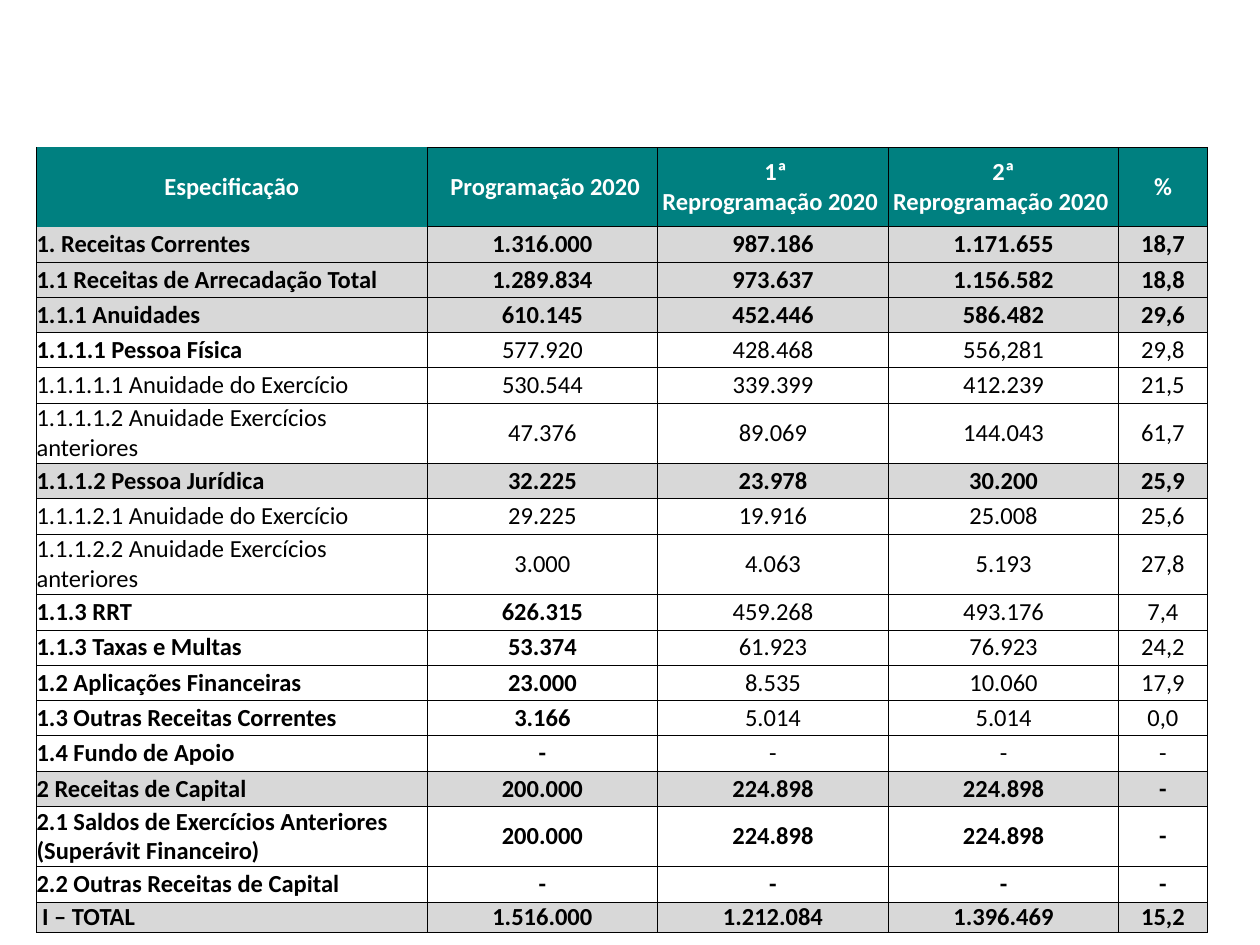
from lxml import etree
from pptx import Presentation
from pptx.dml.color import RGBColor
from pptx.enum import text
from pptx.oxml import ns
from pptx.util import Inches, Pt

TEAL, GREY, WHITE, BLACK = "008080", "D8D8D8", "FFFFFF", "000000"

HEADER = ["Especificação", " Programação 2020", " 1ª\nReprogramação 2020 ",
          "2ª\nReprogramação 2020 ", "%"]

# Number of bold cells from the left, fill, cell texts
ROWS = [
    (5, GREY, ["1. Receitas Correntes", "1.316.000", "987.186", "1.171.655", "18,7"]),
    (5, GREY, ["1.1 Receitas de Arrecadação Total", "1.289.834", "973.637", "1.156.582", "18,8"]),
    (5, GREY, ["1.1.1 Anuidades", "610.145", "452.446", "586.482", "29,6"]),
    (1, WHITE, ["1.1.1.1 Pessoa Física", "577.920", "428.468", "556,281", "29,8"]),
    (0, WHITE, ["1.1.1.1.1 Anuidade do Exercício", "530.544", "339.399", "412.239", "21,5"]),
    (0, WHITE, ["1.1.1.1.2 Anuidade Exercícios anteriores", "47.376", "89.069", "144.043", "61,7"]),
    (5, GREY, ["1.1.1.2 Pessoa Jurídica", "32.225", "23.978", "30.200", "25,9"]),
    (0, WHITE, ["1.1.1.2.1 Anuidade do Exercício", "29.225", "19.916", "25.008", "25,6"]),
    (0, WHITE, ["1.1.1.2.2 Anuidade Exercícios anteriores", "3.000", "4.063", "5.193", "27,8"]),
    (2, WHITE, ["1.1.3 RRT", "626.315", "459.268", "493.176", "7,4"]),
    (2, WHITE, ["1.1.3 Taxas e Multas", "53.374", "61.923", "76.923", "24,2"]),
    (2, WHITE, ["1.2 Aplicações Financeiras", "23.000", "8.535", "10.060", "17,9"]),
    (2, WHITE, ["1.3 Outras Receitas Correntes", "3.166", "5.014", "5.014", "0,0"]),
    (2, WHITE, ["1.4 Fundo de Apoio", "-", "-", "-", "-"]),
    (5, GREY, ["2 Receitas de Capital", "200.000", "224.898", "224.898", "-"]),
    (5, WHITE, ["2.1 Saldos de Exercícios Anteriores (Superávit Financeiro)",
                "200.000", "224.898", "224.898", "-"]),
    (5, WHITE, ["2.2 Outras Receitas de Capital", "-", "-", "-", "-"]),
    (5, GREY, [" I – TOTAL", "1.516.000", "1.212.084", "1.396.469", "15,2"]),
]
COLUMN_WIDTHS = [3.1, 1.83, 1.83, 1.83, 0.7]
HEADER_HEIGHT, LINE_HEIGHT, TWO_LINE_HEIGHT, TOTAL_HEIGHT = 0.63, 0.28, 0.48, 0.24
ONE_LINE_LIMIT = 35


def color(value):
    return RGBColor.from_string(value)


def row_height(label):
    return TWO_LINE_HEIGHT if len(label) > ONE_LINE_LIMIT else LINE_HEIGHT


def set_borders(cell, sides):
    """Draw thin black lines on the given sides and none on the others."""
    properties = cell._tc.get_or_add_tcPr()
    for side in "LRTB":
        line = etree.SubElement(properties, ns.qn(f"a:ln{side}"), w=str(Pt(0.5)))
        if side in sides:
            fill = etree.SubElement(line, ns.qn("a:solidFill"))
            etree.SubElement(fill, ns.qn("a:srgbClr"), val=BLACK)
        else:
            etree.SubElement(line, ns.qn("a:noFill"))


def fill_cell(cell, words, fill, ink, bold, centred, sides):
    set_borders(cell, sides)
    cell.fill.solid()
    cell.fill.fore_color.rgb = color(fill)
    cell.margin_left = cell.margin_right = cell.margin_top = cell.margin_bottom = 0
    cell.vertical_anchor = text.MSO_ANCHOR.MIDDLE
    cell.text_frame.text = words
    for para in cell.text_frame.paragraphs:
        para.alignment = text.PP_ALIGN.CENTER if centred else text.PP_ALIGN.LEFT
        for span in para.runs:
            span.font.name = "Calibri"
            span.font.size = Pt(14)
            span.font.bold = bold
            span.font.color.rgb = color(ink)


def main():
    deck = Presentation()
    deck.slide_width, deck.slide_height = Inches(10), Inches(7.5)
    page = deck.slides.add_slide(deck.slide_layouts[6])

    lines = [(5, TEAL, HEADER)] + ROWS
    heights = [HEADER_HEIGHT] + [row_height(cells[0]) for _, _, cells in ROWS]
    heights[-1] = TOTAL_HEIGHT
    table = page.shapes.add_table(
        len(lines), len(HEADER), Inches(0.29), Inches(1.17),
        Inches(sum(COLUMN_WIDTHS)), Inches(sum(heights))).table
    table.first_row = table.horz_banding = False
    for column, width in zip(table.columns, COLUMN_WIDTHS):
        column.width = Inches(width)
    for row, height in zip(table.rows, heights):
        row.height = Inches(height)

    for r, (bold_count, fill, cells) in enumerate(lines):
        for c, words in enumerate(cells):
            sides = "LRTB"
            if c == 0 and r < 2:
                sides = "LR" if r == 0 else "LRB"
            fill_cell(table.cell(r, c), words, fill, WHITE if r == 0 else BLACK,
                      c < bold_count, r == 0 or c > 0, sides)

    deck.save("out.pptx")


if __name__ == "__main__":
    main()
